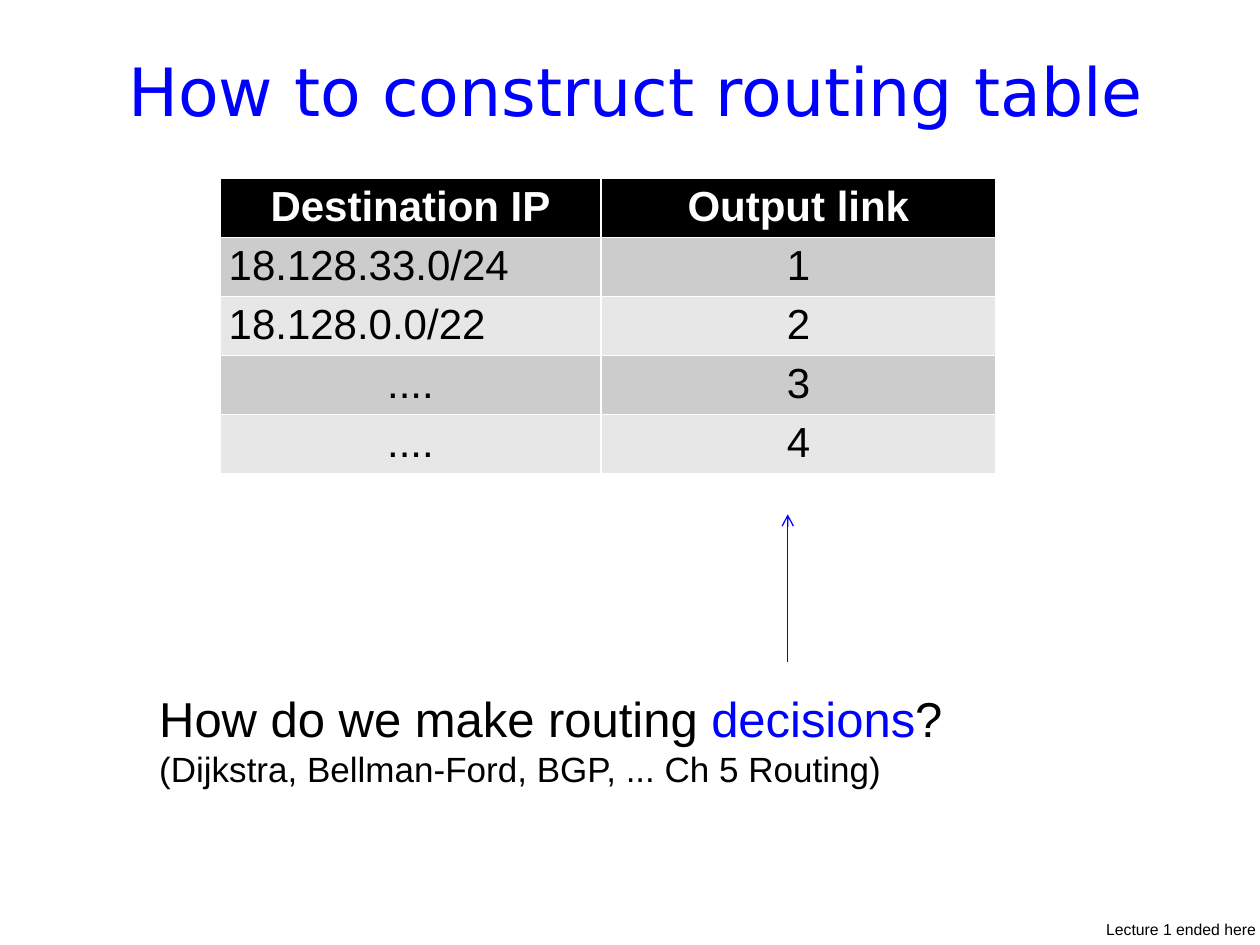
from pptx import Presentation
from pptx.dml.color import RGBColor
from pptx.enum.shapes import MSO_CONNECTOR
from pptx.enum.text import MSO_ANCHOR, MSO_AUTO_SIZE, PP_ALIGN
from pptx.oxml.ns import qn
from pptx.util import Cm, Pt
from lxml import etree

BLUE = RGBColor(0x00, 0x00, 0xFF)
BLACK = RGBColor(0x00, 0x00, 0x00)
WHITE = RGBColor(0xFF, 0xFF, 0xFF)
BANDS = RGBColor(0xCC, 0xCC, 0xCC), RGBColor(0xE7, 0xE7, 0xE7)

LEFT, CENTER = PP_ALIGN.LEFT, PP_ALIGN.CENTER
MIDDLE = MSO_ANCHOR.MIDDLE
GROW = MSO_AUTO_SIZE.SHAPE_TO_FIT_TEXT
NO_FIT = MSO_AUTO_SIZE.NONE
STRAIGHT = MSO_CONNECTOR.STRAIGHT

ROUTES = [
    ("Destination IP", "Output link"),
    ("18.128.33.0/24", "1"),
    ("18.128.0.0/22", "2"),
    ("....", "3"),
    ("....", "4"),
]


def set_attrs(target, values):
    for name, value in values.items():
        setattr(target, name, value)


def add_run(p, text, size, color=BLACK, name="Arial", bold=False):
    r = p.add_run()
    r.text = text
    set_attrs(r.font, {"size": Pt(size), "name": name, "bold": bold})
    r.font.color.rgb = color


def add_title(slide, left, top, width, height):
    title = slide.shapes.title
    set_attrs(title, {"left": Cm(left), "top": Cm(top),
                      "width": Cm(width), "height": Cm(height)})
    tf = title.text_frame
    set_attrs(tf, {"vertical_anchor": MIDDLE, "word_wrap": True,
                   "auto_size": NO_FIT})
    p = tf.paragraphs[0]
    p.alignment = LEFT
    add_run(p, "How to construct routing table", 38, BLUE, "DejaVu Sans")


def add_routing_table(slide, left, top, col_widths, row_height):
    frame = slide.shapes.add_table(
        len(ROUTES), len(col_widths), Cm(left), Cm(top),
        Cm(sum(col_widths)), Cm(row_height * len(ROUTES)))
    table = frame.table
    for col, width in zip(table.columns, col_widths):
        col.width = Cm(width)
    for i, route in enumerate(ROUTES):
        header = i == 0
        for j, text in enumerate(route):
            cell = table.cell(i, j)
            cell.fill.solid()
            cell.fill.fore_color.rgb = BLACK if header else BANDS[(i - 1) % 2]
            set_attrs(cell, {"margin_left": Cm(0.18), "margin_right": Cm(0.18),
                             "margin_top": Cm(0.1), "margin_bottom": Cm(0.1)})
            p = cell.text_frame.paragraphs[0]
            # Addresses start at the left, everything else is centred
            p.alignment = LEFT if "/" in text else CENTER
            add_run(p, text, 24, WHITE if header else BLACK, bold=header)


def add_arrow(slide, x, start_y, end_y):
    line = slide.shapes.add_connector(
        STRAIGHT, Cm(x), Cm(start_y), Cm(x), Cm(end_y))
    line.line.color.rgb = BLUE
    line.line.width = Pt(0.75)
    sp_pr = line.line.fill and line._element.spPr
    etree.SubElement(sp_pr.find(qn("a:ln")), qn("a:tailEnd"), type="arrow")
    etree.SubElement(sp_pr, qn("a:effectLst"))


def add_text(slide, left, top, width, height, lines):
    box = slide.shapes.add_textbox(Cm(left), Cm(top), Cm(width), Cm(height))
    tf = box.text_frame
    set_attrs(tf, {"word_wrap": False, "auto_size": GROW})
    for i, runs in enumerate(lines):
        p = tf.add_paragraph() if i else tf.paragraphs[0]
        for run in runs:
            add_run(p, *run)


def main():
    prs = Presentation()
    prs.slide_width, prs.slide_height = Cm(25.4), Cm(19.05)
    slide = prs.slides.add_slide(prs.slide_layouts[5])

    add_title(slide, 2.33, 0.64, 22.43, 2.33)
    add_routing_table(slide, 4.43, 3.6, (7.69, 7.95), 1.19)

    # Question and the arrow up to the output links
    add_text(slide, 2.96, 13.76, 16.5, 2.31, [
        [("How do we make routing ", 28), ("decisions", 28, BLUE), ("?", 28)],
        [("(Dijkstra, Bellman-Ford, BGP, ... Ch 5 Routing)", 20)],
    ])
    add_arrow(slide, 15.88, 13.34, 10.37)

    # Lecture marker
    add_text(slide, 22.05, 18.41, 3.55, 0.64, [[("Lecture 1 ended here", 9)]])

    prs.save("out.pptx")


if __name__ == "__main__":
    main()
